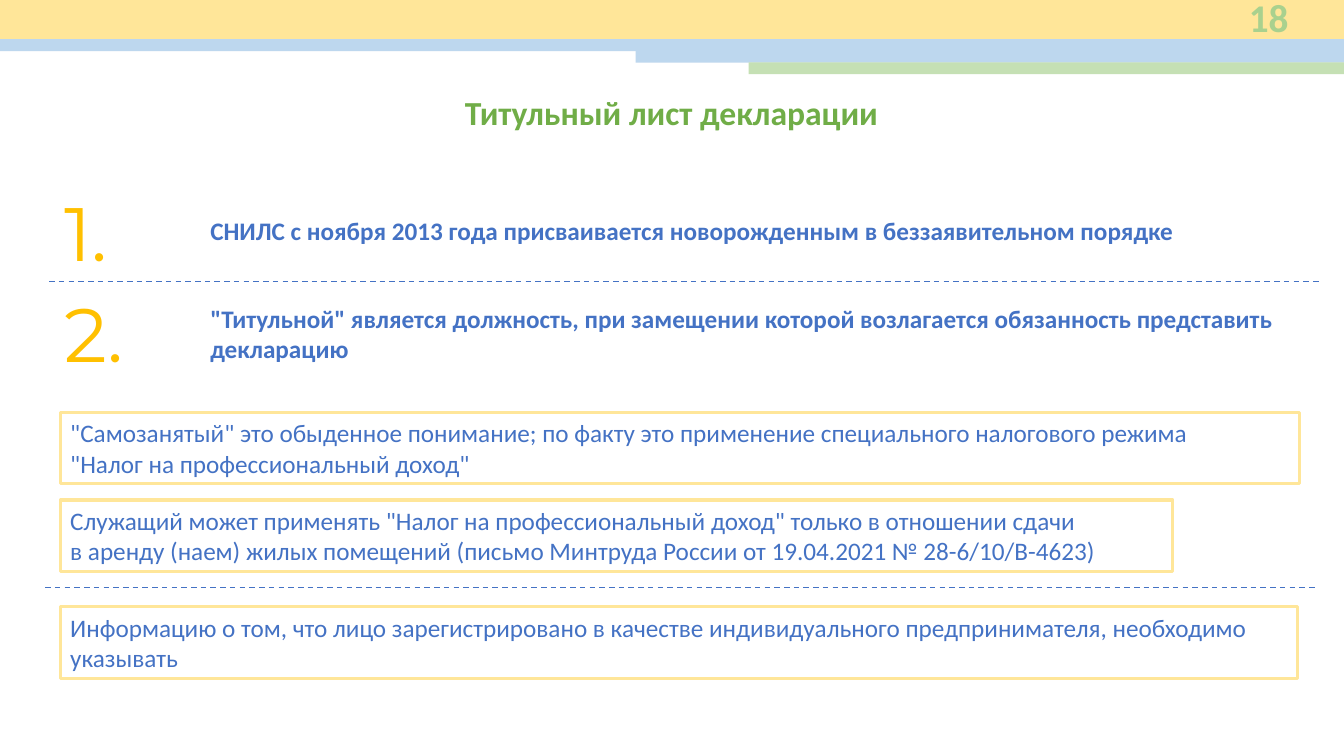
import dataclasses

import lxml.etree
import pptx
import pptx.dml.color
import pptx.enum.dml
import pptx.enum.shapes
import pptx.enum.text
import pptx.oxml.ns
import pptx.util

Cm = pptx.util.Cm
Pt = pptx.util.Pt
RGB = pptx.dml.color.RGBColor.from_string
ALIGN = pptx.enum.text.PP_ALIGN
RECTANGLE = pptx.enum.shapes.MSO_SHAPE.RECTANGLE


@dataclasses.dataclass(frozen=True)
class Theme:
    font: str = "Calibri"
    number_font: str = "Montserrat"
    yellow: str = "FFE699"
    light_blue: str = "BDD7EE"
    light_green: str = "C5E0B4"
    page_number: str = "A9D18E"
    title: str = "70AD47"
    blue: str = "4472C4"
    amber: str = "FFC000"
    body_size: int = 18
    title_size: int = 24
    page_size: int = 28
    number_size: int = 54


theme = Theme()
deck = pptx.Presentation()
deck.slide_width, deck.slide_height = Cm(33.87), Cm(19.05)
page = deck.slides.add_slide(deck.slide_layouts[6])


def add_rectangle(place):
    """Add a shadowless rectangle at (left, top, width, height) in centimetres."""
    rectangle = page.shapes.add_shape(RECTANGLE, *map(Cm, place))
    rectangle.shadow.inherit = False
    return rectangle


def write(box, text, size, color, bold=False, align=ALIGN.LEFT, font=theme.font, middle=True):
    """Fill a box with one paragraph, breaking it at each newline."""
    frame = box.text_frame
    frame.word_wrap = True
    anchor = pptx.enum.text.MSO_ANCHOR
    frame.vertical_anchor = anchor.MIDDLE if middle else anchor.TOP
    para = frame.paragraphs[0]
    para.alignment = align
    for index, line in enumerate(text.split("\n")):
        if index:
            para.add_line_break()
        span = para.add_run()
        span.text = line
        span.font.name = font
        span.font.size = Pt(size)
        span.font.bold = bold
        span.font.color.rgb = RGB(color)


# Header bands
bands = [
    ((0, 0, 33.87, 1), theme.yellow),
    ((0, 0.99, 33.87, 0.3), theme.light_blue),
    ((16.02, 1.28, 17.85, 0.3), theme.light_blue),
    ((18.87, 1.57, 15, 0.3), theme.light_green),
]
for place, color in bands:
    band = add_rectangle(place)
    band.fill.solid()
    band.fill.fore_color.rgb = RGB(color)
    band.line.fill.background()

page_number = page.shapes.add_textbox(Cm(29.54), Cm(-0.13), Cm(3.18), Cm(1.12))
write(page_number, "18", theme.page_size, theme.page_number, True, ALIGN.RIGHT)

title = page.shapes.add_textbox(Cm(1.52), Cm(2.18), Cm(30.81), Cm(1.27))
write(title, "Титульный лист декларации", theme.title_size, theme.title, True, ALIGN.CENTER,
      middle=False)

# Numbered points
points = [
    (4.55, 5.05, 28.22, 1.52,
     "СНИЛС с ноября 2013 года присваивается новорожденным в беззаявительном порядке"),
    (7.11, 7.29, 28.09, 2.21,
     '"Титульной" является должность, при замещении которой возлагается обязанность '
     "представить декларацию"),
]
for number, (number_top, top, width, height, text) in enumerate(points, start=1):
    number_box = page.shapes.add_textbox(Cm(1.37), Cm(number_top), Cm(3.18), Cm(2.57))
    write(number_box, f"{number}.", theme.number_size, theme.amber,
          font=theme.number_font, middle=False)
    point_box = page.shapes.add_textbox(Cm(5.05), Cm(top), Cm(width), Cm(height))
    write(point_box, text, theme.body_size, theme.blue, True)

# Framed notes
notes = [
    (10.39, 31.22,
     '"Самозанятый" это обыденное понимание; по факту это применение специального '
     'налогового режима\n"Налог на профессиональный доход"'),
    (12.6, 28.04,
     'Служащий может применять "Налог на профессиональный доход" только в отношении сдачи\n'
     "в аренду (наем) жилых помещений (письмо Минтруда России от 19.04.2021 № 28-6/10/В-4623)"),
    (15.29, 31.19,
     "Информацию о том, что лицо зарегистрировано в качестве индивидуального "
     "предпринимателя, необходимо указывать"),
]
for top, width, text in notes:
    note = add_rectangle((1.52, top, width, 1.8))
    note.fill.background()
    note.line.color.rgb = RGB(theme.yellow)
    note.line.width = Pt(2.25)
    write(note, text, theme.body_size, theme.blue)

# Dashed dividers
for left, top in [(1.24, 7.09), (1.14, 14.81)]:
    divider = page.shapes.add_connector(
        pptx.enum.shapes.MSO_CONNECTOR.STRAIGHT, Cm(left), Cm(top), Cm(left + 32.03), Cm(top))
    divider.line.color.rgb = RGB(theme.blue)
    divider.line.width = Pt(1)
    divider.line.dash_style = pptx.enum.dml.MSO_LINE.DASH
    properties = divider.element.find(pptx.oxml.ns.qn("p:spPr"))
    lxml.etree.SubElement(properties, pptx.oxml.ns.qn("a:effectLst"))

deck.save("out.pptx")
